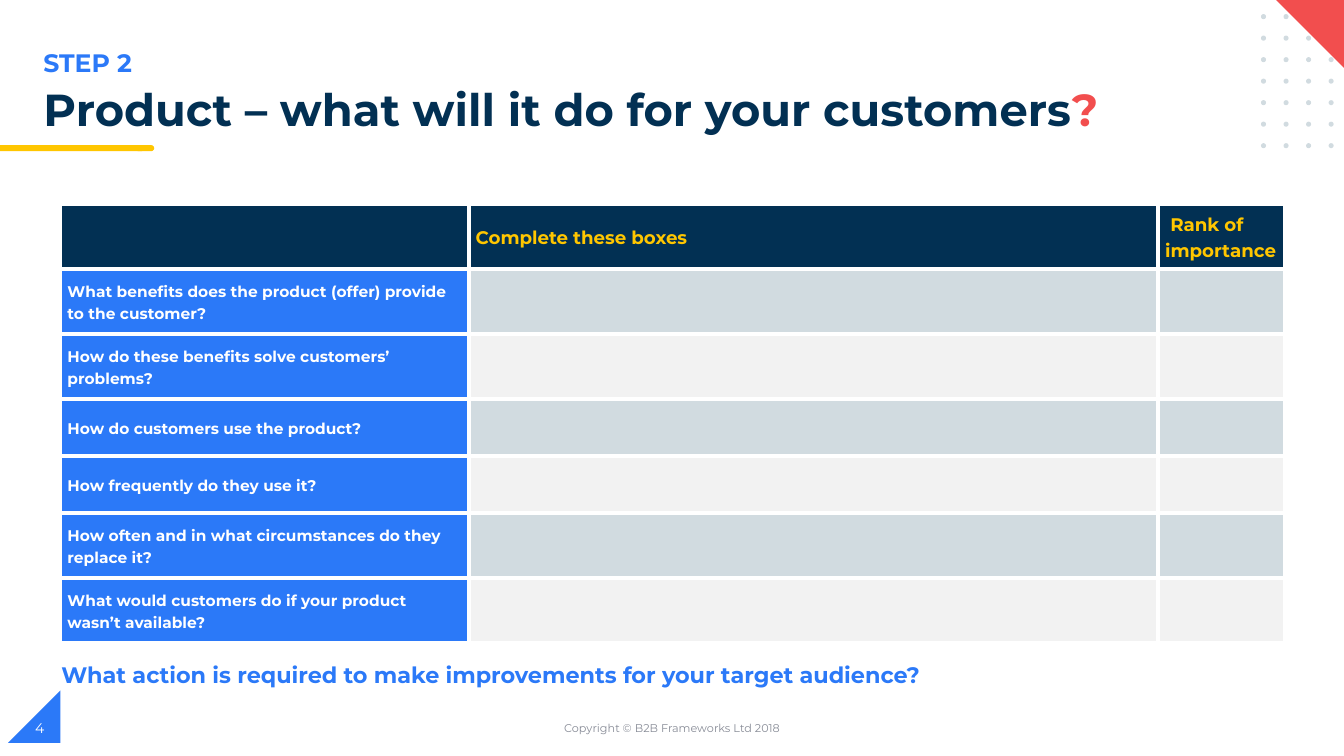
from dataclasses import dataclass

from lxml import etree
from pptx import Presentation
from pptx.dml.color import RGBColor
from pptx.enum.shapes import MSO_SHAPE
from pptx.enum.text import MSO_ANCHOR, MSO_AUTO_SIZE, PP_ALIGN
from pptx.oxml.ns import qn
from pptx.slide import Slide
from pptx.table import _Cell
from pptx.text.text import TextFrame
from pptx.util import Pt

RECT = MSO_SHAPE.RECTANGLE
PILL = MSO_SHAPE.FLOWCHART_TERMINATOR
OVAL = MSO_SHAPE.OVAL
WEDGE = MSO_SHAPE.RIGHT_TRIANGLE
TOP, MIDDLE = MSO_ANCHOR.TOP, MSO_ANCHOR.MIDDLE
LEFT, CENTER = PP_ALIGN.LEFT, PP_ALIGN.CENTER
FIXED = MSO_AUTO_SIZE.NONE

FONT = "Montserrat"
NAVY, BLUE, YELLOW, RED = "023053", "2B79F8", "FFC600", "F24E4E"
MIST, PALE, GREY, WHITE = "D1DBE0", "F2F2F2", "888C97", "FFFFFF"


@dataclass
class Form:
    kind: MSO_SHAPE
    left: float
    top: float
    width: float
    height: float
    fill: str
    turn: float = 0


@dataclass
class Label:
    text: str
    left: float
    top: float
    width: float
    height: float
    size: float
    color: str
    bold: bool = False
    align: PP_ALIGN = LEFT
    anchor: MSO_ANCHOR = TOP


def rgb(code: str) -> RGBColor:
    return RGBColor.from_string(code)


def style(frame: TextFrame, size: float, color: str, bold: bool) -> None:
    for run in frame.paragraphs[0].runs:
        run.font.name = FONT
        run.font.size = Pt(size)
        run.font.bold = bold
        run.font.color.rgb = rgb(color)


def draw(slide: Slide, form: Form) -> None:
    shape = slide.shapes.add_shape(
        form.kind, Pt(form.left), Pt(form.top), Pt(form.width), Pt(form.height))
    shape.shadow.inherit = False
    shape.fill.solid()
    shape.fill.fore_color.rgb = rgb(form.fill)
    shape.line.fill.background()
    shape.rotation = form.turn


def write(slide: Slide, label: Label) -> None:
    box = slide.shapes.add_textbox(
        Pt(label.left), Pt(label.top), Pt(label.width), Pt(label.height))
    frame = box.text_frame
    frame.word_wrap = True
    frame.vertical_anchor = label.anchor
    frame.text = label.text
    frame.paragraphs[0].alignment = label.align
    style(frame, label.size, label.color, label.bold)


def border(cell: _Cell, color: str, width: float) -> None:
    props = cell._tc.get_or_add_tcPr()
    for side in ("a:lnL", "a:lnR", "a:lnT", "a:lnB"):
        line = etree.SubElement(props, qn(side), w=str(Pt(width)))
        fill = etree.SubElement(line, qn("a:solidFill"))
        etree.SubElement(fill, qn("a:srgbClr"), val=color)


def set_cell(cell: _Cell, text: str, fill: str, size: float, color: str) -> None:
    border(cell, WHITE, 3)
    cell.fill.solid()
    cell.fill.fore_color.rgb = rgb(fill)
    cell.vertical_anchor = MIDDLE
    cell.margin_left = cell.margin_right = Pt(5)
    cell.margin_top = cell.margin_bottom = Pt(0)
    if text:
        cell.text_frame.text = text
        cell.text_frame.paragraphs[0].line_spacing = 1.15
        style(cell.text_frame, size, color, True)


def add_title(slide: Slide) -> None:
    title = slide.shapes.title
    title.left, title.top = Pt(23.8), Pt(59)
    title.width, title.height = Pt(803), Pt(40.3)
    frame = title.text_frame
    frame.word_wrap = True
    frame.auto_size = FIXED
    frame.vertical_anchor = TOP
    frame.text = "Product – what will it do for your customers"
    para = frame.paragraphs[0]
    para.alignment = LEFT
    para.line_spacing = 0.9
    mark = para.add_run()
    mark.text = "?"
    style(frame, 32, NAVY, True)
    mark.font.color.rgb = rgb(RED)


def add_grid(slide: Slide) -> None:
    heads = ("", "Complete these boxes", " Rank of importance")
    asks = (
        "What benefits does the product (offer) provide to the customer?",
        "How do these benefits solve customers’ problems?",
        "How do customers use the product?",
        "How frequently do they use it?",
        "How often and in what circumstances do they replace it?",
        "What would customers do if your product wasn’t available?",
    )
    widths = (291.6, 492.5, 90.7)
    tall, short = 46.5, 40.6
    heights = (tall, tall, tall, short, short, tall, tall)
    table = slide.shapes.add_table(
        len(heights), len(widths), Pt(43.2), Pt(145.6),
        Pt(sum(widths)), Pt(sum(heights))).table
    for col, width in zip(table.columns, widths):
        col.width = Pt(width)
    for row, height in zip(table.rows, heights):
        row.height = Pt(height)
    for col, head in enumerate(heads):
        set_cell(table.cell(0, col), head, NAVY, 13, YELLOW)
    for row, ask in enumerate(asks, 1):
        set_cell(table.cell(row, 0), ask, BLUE, 11, WHITE)
        for col in (1, 2):
            set_cell(table.cell(row, col), "", MIST if row % 2 else PALE, 11, NAVY)


def main() -> None:
    deck = Presentation()
    deck.slide_width, deck.slide_height = Pt(960), Pt(540)
    slide = deck.slides.add_slide(deck.slide_layouts[5])

    # Corner wedges, title bar and dot pattern
    dots = [Form(OVAL, 900.7 + 16.1 * col, 10.1 + 15.36 * row, 3.6, 3.6, MIST)
            for row in range(7) for col in range(4)]
    forms = [
        Form(WEDGE, 5.8, 493.2, 37.4, 37.4, BLUE, 270),
        Form(PILL, 96.5, 103.7, 13.7, 4.3, YELLOW),
        Form(RECT, 0, 103.7, 101.5, 4.3, YELLOW),
        *dots,
        Form(WEDGE, 910.8, -0.7, 51.8, 51.8, RED, 180),
    ]
    for form in forms:
        draw(slide, form)

    # Title and table
    add_title(slide)
    add_grid(slide)

    # Step name, closing question and footer
    labels = (
        Label("STEP 2", 23.8, 30.2, 481.7, 29, 18, BLUE, True),
        Label("What action is required to make improvements for your target audience?",
              36.7, 468.7, 635.8, 26.6, 16, BLUE, True),
        Label("Copyright © B2B Frameworks Ltd 2018", 318.2, 505.4, 324, 28.8,
              8, GREY, align=CENTER, anchor=MIDDLE),
        Label("4", 18, 505.4, 216, 28.8, 10, WHITE, anchor=MIDDLE),
    )
    for label in labels:
        write(slide, label)

    deck.save("out.pptx")


if __name__ == "__main__":
    main()
